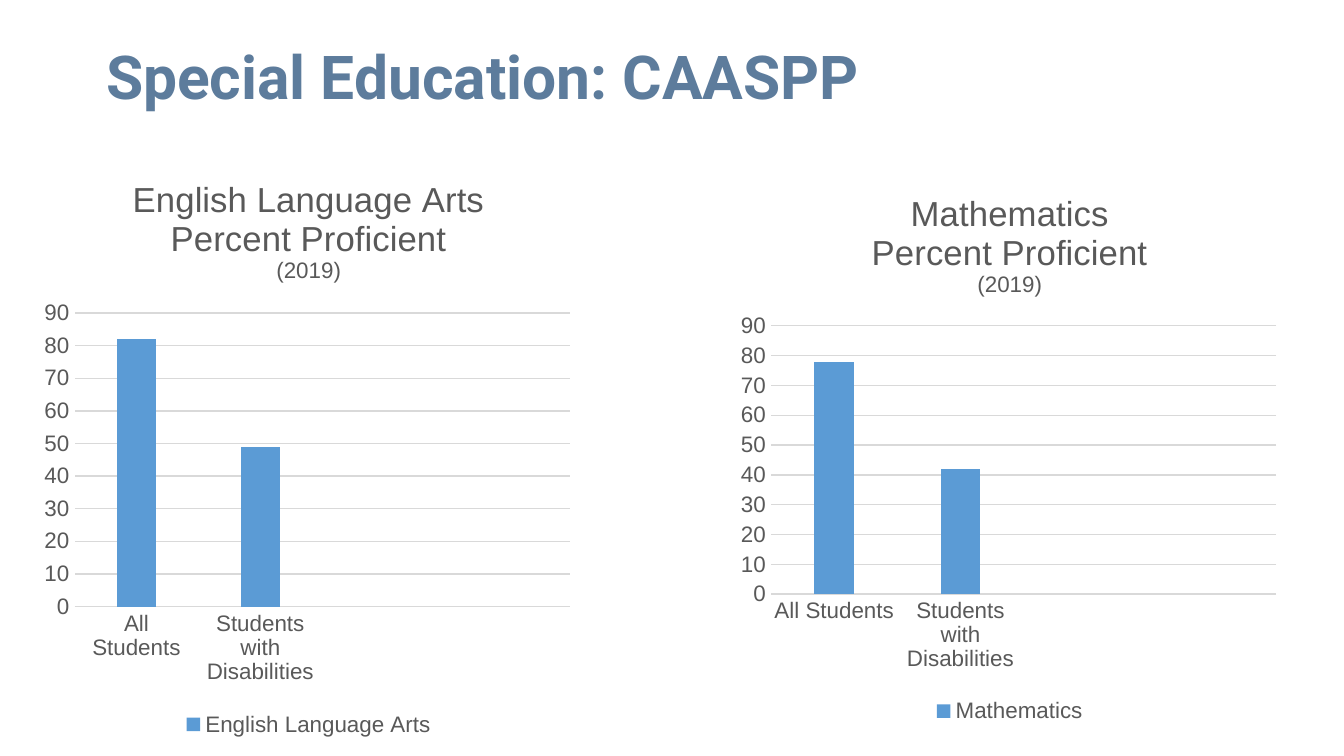
from dataclasses import dataclass

from pptx import Presentation
from pptx.chart.data import CategoryChartData
from pptx.dml.color import RGBColor
from pptx.enum.chart import XL_CHART_TYPE, XL_LEGEND_POSITION, XL_TICK_MARK
from pptx.enum.text import MSO_ANCHOR, MSO_AUTO_SIZE, PP_ALIGN
from pptx.oxml import parse_xml
from pptx.oxml.ns import nsdecls
from pptx.util import Cm, Pt

COLUMNS = XL_CHART_TYPE.COLUMN_CLUSTERED
BOTTOM = XL_LEGEND_POSITION.BOTTOM
NO_TICK = XL_TICK_MARK.NONE
TITLE_ONLY = 5


@dataclass(frozen=True)
class Theme:
    heading: RGBColor = RGBColor(0x5D, 0x7C, 0x9C)
    text: RGBColor = RGBColor(0x59, 0x59, 0x59)
    grid: RGBColor = RGBColor(0xD9, 0xD9, 0xD9)
    bar: RGBColor = RGBColor(0x5B, 0x9B, 0xD5)
    heading_font: str = "Roboto"
    chart_font: str = "Arial"
    heading_size: float = 32.4
    chart_title_size: float = 18.6
    label_size: float = 12
    line_width: float = 0.75


class SlideBuilder:
    def __init__(self, prs, theme):
        self.theme = theme
        self.slide = prs.slides.add_slide(prs.slide_layouts[TITLE_ONLY])

    def style_font(self, font, name, size, color, bold=False):
        font.name, font.size, font.bold = name, Pt(size), bold
        font.color.rgb = color

    def style_label(self, font, size=None):
        t = self.theme
        self.style_font(font, t.chart_font, size or t.label_size, t.text)

    def style_line(self, line):
        line.color.rgb = self.theme.grid
        line.width = Pt(self.theme.line_width)

    def title(self, text, left, top, width, height):
        t = self.theme
        s = self.slide.shapes.title
        s.left, s.top, s.width, s.height = Cm(left), Cm(top), Cm(width), Cm(height)
        tf = s.text_frame
        tf.text = text
        tf.word_wrap = True
        tf.auto_size = MSO_AUTO_SIZE.NONE
        tf.vertical_anchor = MSO_ANCHOR.TOP
        p = tf.paragraphs[0]
        p.alignment = PP_ALIGN.LEFT
        p.line_spacing = 0.9
        self.style_font(p.runs[0].font, t.heading_font, t.heading_size, t.heading, True)

    def column_chart(self, subject, values, categories, box, plot_box):
        data = CategoryChartData()
        data.categories = categories
        data.add_series(subject, values)
        frame = self.slide.shapes.add_chart(COLUMNS, *map(Cm, box), data)
        chart = frame.chart
        self.style_label(chart.font)
        self.chart_title(chart, subject)
        self.axes(chart)

        chart.has_legend = True
        chart.legend.position = BOTTOM
        chart.legend.include_in_layout = False
        self.style_label(chart.legend.font)

        plot = chart.plots[0]
        plot.gap_width, plot.overlap = 219, -27
        plot.vary_by_categories = False
        fill = plot.series[0].format.fill
        fill.solid()
        fill.fore_color.rgb = self.theme.bar
        self.place_plot(plot, plot_box)

    def chart_title(self, chart, subject):
        t = self.theme
        chart.has_title = True
        tf = chart.chart_title.text_frame
        tf.text = f"{subject}\nPercent Proficient\n(2019)"
        sizes = (t.chart_title_size, t.chart_title_size, t.label_size)
        for p, size in zip(tf.paragraphs, sizes):
            self.style_label(p.font, size)
            self.style_label(p.runs[0].font, size)

    def axes(self, chart):
        for axis in (chart.category_axis, chart.value_axis):
            axis.major_tick_mark = axis.minor_tick_mark = NO_TICK
            self.style_label(axis.tick_labels.font)
        self.style_line(chart.category_axis.format.line)
        values = chart.value_axis
        values.minimum_scale, values.maximum_scale, values.major_unit = 0, 90, 10
        values.format.line.fill.background()
        values.has_major_gridlines = True
        self.style_line(values.major_gridlines.format.line)

    def place_plot(self, plot, plot_box):
        """Fix the inner plot area, given as x, y, w, h fractions of the chart."""
        area = plot._element.getparent()
        for old in area.findall("{*}layout"):
            area.remove(old)
        sizes = "".join(f'<c:{k} val="{v}"/>' for k, v in zip("xywh", plot_box))
        area.insert(0, parse_xml(
            f'<c:layout {nsdecls("c")}><c:manualLayout><c:layoutTarget val="inner"/>'
            f'<c:xMode val="edge"/><c:yMode val="edge"/>{sizes}'
            "</c:manualLayout></c:layout>"))


def main():
    prs = Presentation()
    prs.slide_width, prs.slide_height = Cm(25.4), Cm(14.29)
    builder = SlideBuilder(prs, Theme())
    builder.title("Special Education: CAASPP", 1.75, 0.76, 21.9, 2.77)

    # The two unnamed categories keep the right half of each chart free.
    categories = ["All Students", "Students with Disabilities", "", ""]
    charts = [
        ("English Language Arts", (82, 49, None, None),
         (0.69, 2.92, 10.29, 11.1), (0.07, 0.27, 0.91, 0.5)),
        ("Mathematics", (78, 42, None, None),
         (13.84, 3.2, 10.49, 10.57), (0.07, 0.28, 0.91, 0.48)),
    ]
    for subject, values, box, plot_box in charts:
        builder.column_chart(subject, values, categories, box, plot_box)
    prs.save("out.pptx")


if __name__ == "__main__":
    main()
